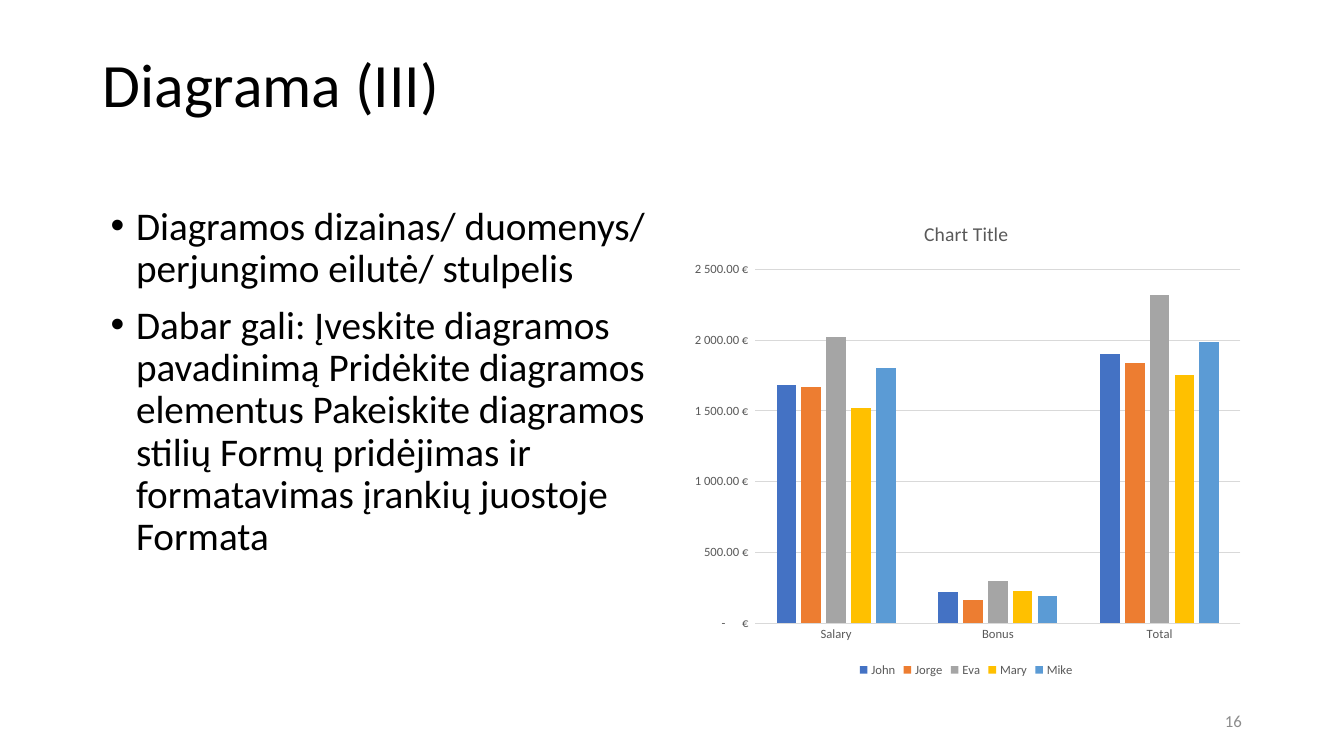
from lxml.etree import SubElement
from pptx import Presentation
from pptx.chart.data import CategoryChartData
from pptx.dml.color import RGBColor
from pptx.enum.chart import XL_CHART_TYPE, XL_LEGEND_POSITION, XL_TICK_MARK
from pptx.enum.text import MSO_ANCHOR, MSO_AUTO_SIZE, PP_ALIGN
from pptx.oxml.ns import qn
from pptx.util import Cm, Pt

EURO_FORMAT = (r'_-* #\ ##0.00\ [$€-426]_-;\-* #\ ##0.00\ [$€-426]_-;'
               r'_-* "-"??\ [$€-426]_-;_-@_-')
CATEGORIES = ["Salary", "Bonus", "Total"]
PAY = {
    "John": ("4472C4", [1680, 220, 1900]),
    "Jorge": ("ED7D31", [1670, 160, 1840]),
    "Eva": ("A5A5A5", [2020, 300, 2320]),
    "Mary": ("FFC000", [1520, 230, 1750]),
    "Mike": ("5B9BD5", [1800, 190, 1990]),
}
ADVICE = [
    "Diagramos dizainas/ duomenys/ perjungimo eilutė/ stulpelis",
    "Dabar gali: Įveskite diagramos pavadinimą Pridėkite diagramos elementus "
    "Pakeiskite diagramos stilių Formų pridėjimas ir formatavimas įrankių "
    "juostoje Formata",
]


def color(value):
    return RGBColor.from_string(value)


def add_bullet(para, indent):
    """Give the paragraph a round bullet with a hanging indent."""
    properties = para._p.get_or_add_pPr()
    properties.set("marL", str(indent))
    properties.set("indent", str(-indent))
    SubElement(properties, qn("a:buFont"), typeface="Arial")
    SubElement(properties, qn("a:buChar"), char="•")


class SlideBuilder:
    font_name = "Calibri"
    text_color = "000000"
    chart_color = "595959"
    grid_color = "D9D9D9"

    def __init__(self, deck):
        self.page = deck.slides.add_slide(deck.slide_layouts[5])

    def style_font(self, font, size, shade):
        font.name = self.font_name
        font.size = Pt(size)
        font.bold = False
        font.color.rgb = color(shade)

    def fill_text(self, box, lines, size, shade=text_color, align=PP_ALIGN.LEFT,
                  anchor=MSO_ANCHOR.TOP, spacing=1.0, before=0, bullets=False):
        """Fill a box with one paragraph per line, all in the same format."""
        frame = box.text_frame
        frame.word_wrap = True
        frame.auto_size = MSO_AUTO_SIZE.NONE
        frame.vertical_anchor = anchor
        for index, line in enumerate(lines):
            para = frame.add_paragraph() if index else frame.paragraphs[0]
            para.alignment = align
            para.line_spacing = spacing
            para.space_before = Pt(before if index else 0)
            if bullets:
                add_bullet(para, Cm(0.64))
            span = para.add_run()
            span.text = line
            self.style_font(span.font, size, shade)

    def title(self, text, left, top, width, height):
        box = self.page.shapes.title
        box.left, box.top, box.width, box.height = left, top, width, height
        self.fill_text(box, [text], 44, anchor=MSO_ANCHOR.MIDDLE, spacing=0.9)

    def text(self, lines, left, top, width, height, **text_format):
        box = self.page.shapes.add_textbox(left, top, width, height)
        self.fill_text(box, lines, **text_format)

    def style_axis(self, axis):
        axis.major_tick_mark = axis.minor_tick_mark = XL_TICK_MARK.NONE
        self.style_font(axis.tick_labels.font, 9, self.chart_color)

    def style_line(self, line):
        line.color.rgb = color(self.grid_color)
        line.width = Pt(0.75)

    def column_chart(self, heading, left, top, width, height):
        data = CategoryChartData(number_format=EURO_FORMAT)
        data.categories = CATEGORIES
        for name, (_, values) in PAY.items():
            data.add_series(name, values)
        chart = self.page.shapes.add_chart(
            XL_CHART_TYPE.COLUMN_CLUSTERED, left, top, width, height, data).chart
        self.style_font(chart.font, 10, self.text_color)

        chart.has_title = True
        chart.chart_title.include_in_layout = False
        span = chart.chart_title.text_frame.paragraphs[0].add_run()
        span.text = heading
        self.style_font(span.font, 14, self.chart_color)

        chart.has_legend = True
        chart.legend.position = XL_LEGEND_POSITION.BOTTOM
        chart.legend.include_in_layout = False
        self.style_font(chart.legend.font, 9, self.chart_color)

        self.style_axis(chart.category_axis)
        self.style_line(chart.category_axis.format.line)
        value_axis = chart.value_axis
        self.style_axis(value_axis)
        value_axis.format.line.fill.background()
        value_axis.minimum_scale, value_axis.maximum_scale = 0, 2500
        value_axis.major_unit = 500
        value_axis.has_major_gridlines = True
        self.style_line(value_axis.major_gridlines.format.line)
        value_axis.tick_labels.number_format = EURO_FORMAT
        value_axis.tick_labels.number_format_is_linked = False

        plot = chart.plots[0]
        plot.vary_by_categories = False
        plot.gap_width, plot.overlap = 219, -27
        for series, (shade, _) in zip(plot.series, PAY.values()):
            series.format.fill.solid()
            series.format.fill.fore_color.rgb = color(shade)
            series.invert_if_negative = False


def main():
    deck = Presentation()
    deck.slide_width, deck.slide_height = Cm(33.87), Cm(19.05)
    builder = SlideBuilder(deck)
    builder.title("Diagrama (III)", Cm(2.33), Cm(1.02), Cm(29.21), Cm(2.36))
    top, width, height = Cm(5.08), Cm(14.4), Cm(12.09)
    builder.text(ADVICE, Cm(2.54), top, width, height,
                 size=28, spacing=0.9, before=10, bullets=True)
    builder.column_chart("Chart Title", Cm(17.15), top, width, height)
    builder.text(["16"], Cm(23.93), Cm(17.65), Cm(7.62), Cm(1.02), size=12,
                 shade="8C8C8C", align=PP_ALIGN.RIGHT, anchor=MSO_ANCHOR.MIDDLE)
    deck.save("out.pptx")


if __name__ == "__main__":
    main()
